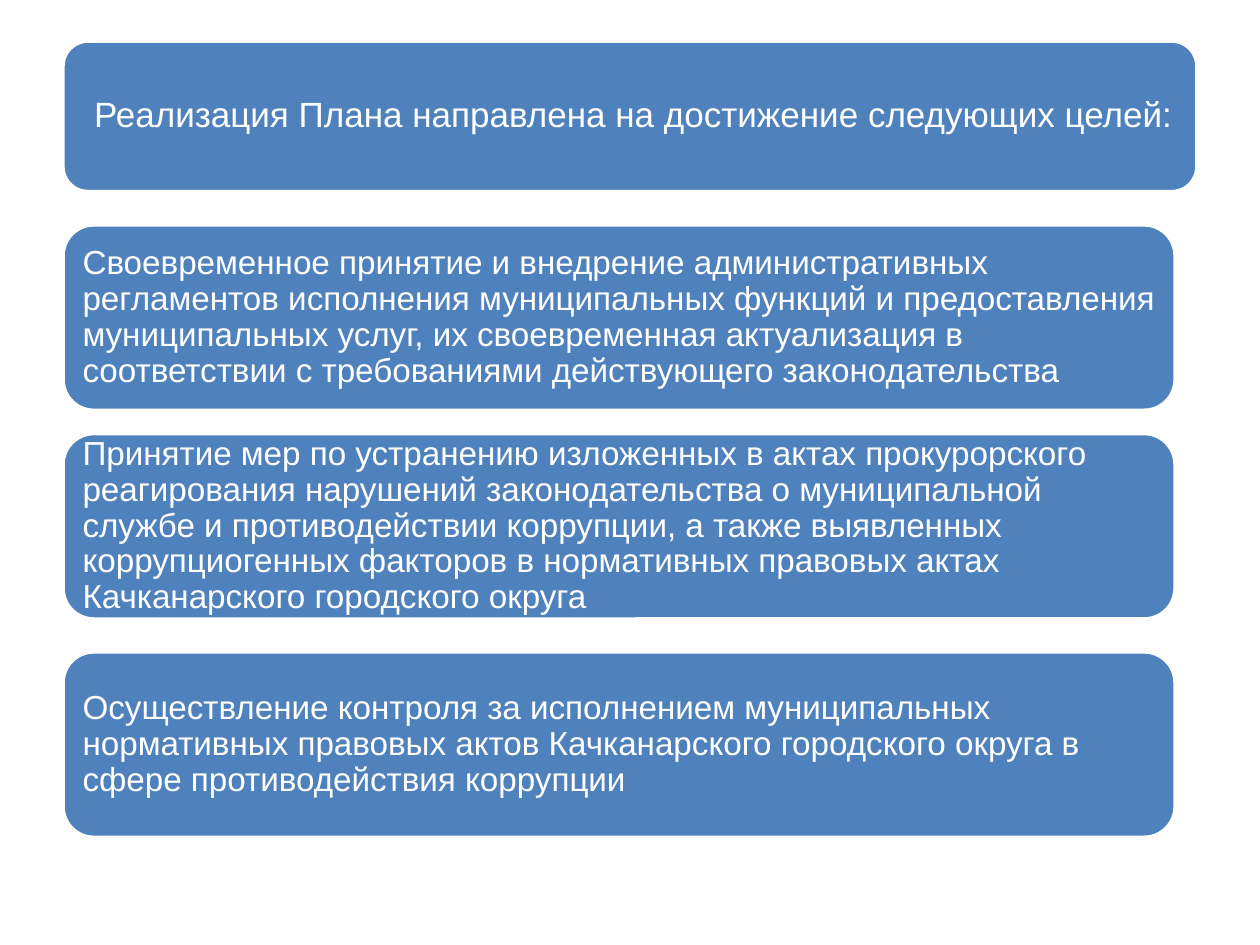
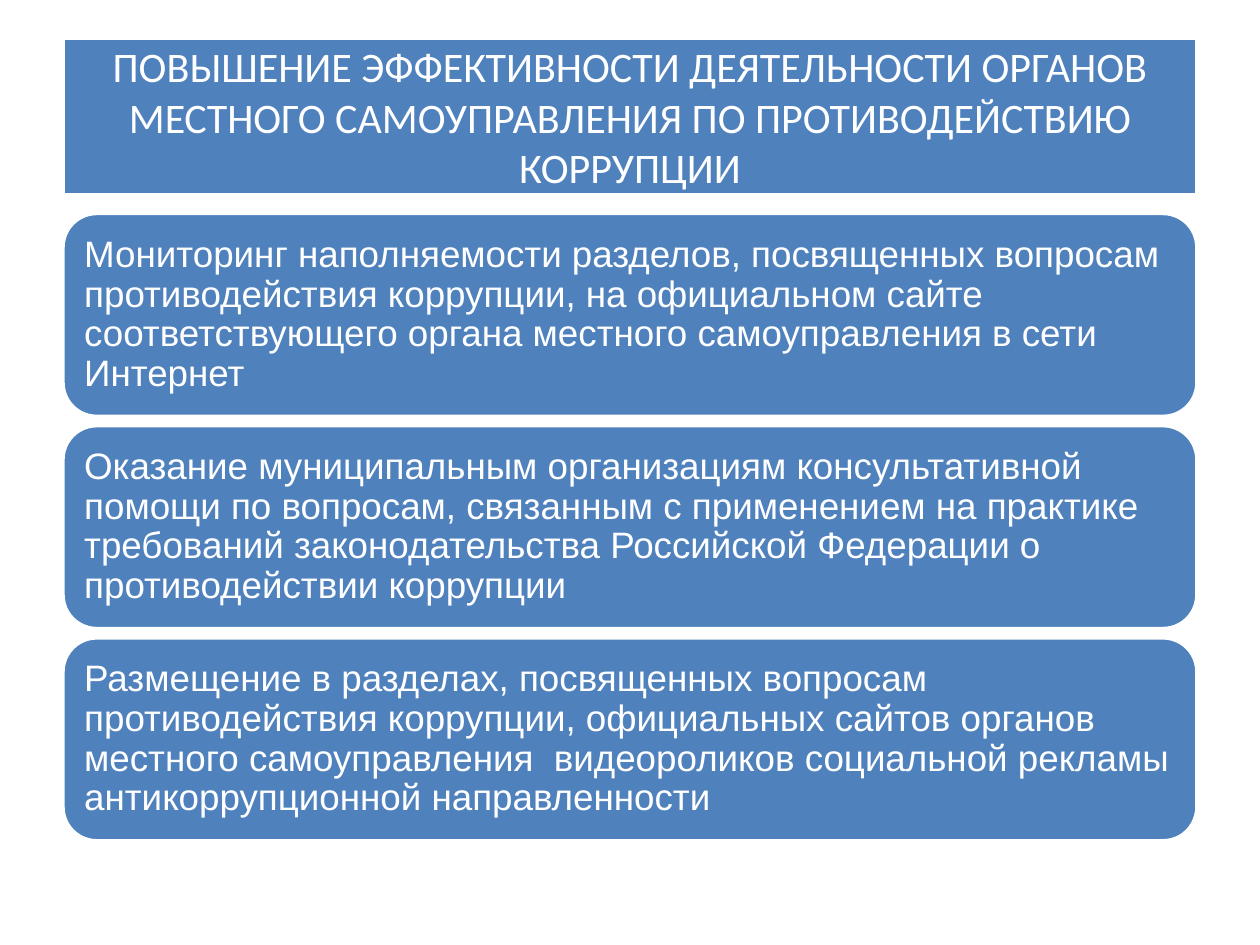
from pptx import Presentation
from pptx.dml.color import RGBColor
from pptx.enum.shapes import MSO_SHAPE
from pptx.enum.text import MSO_ANCHOR, MSO_AUTO_SIZE, PP_ALIGN
from pptx.util import Pt

# Content
GOALS = {
    "title": "Реализация Плана направлена на достижение следующих целей:",
    "cards": [
        "Своевременное принятие и внедрение административных регламентов исполнения "
        "муниципальных функций и предоставления муниципальных услуг, их своевременная "
        "актуализация в соответствии с требованиями действующего законодательства",
        "Принятие мер по устранению изложенных в актах прокурорского реагирования "
        "нарушений законодательства о муниципальной службе и противодействии коррупции, "
        "а также выявленных коррупциогенных факторов в нормативных правовых актах "
        "Качканарского городского округа",
        "Осуществление контроля за исполнением муниципальных нормативных правовых актов "
        "Качканарского городского округа в сфере противодействия коррупции",
    ],
}
STEPS = {
    "title": "ПОВЫШЕНИЕ ЭФФЕКТИВНОСТИ ДЕЯТЕЛЬНОСТИ ОРГАНОВ МЕСТНОГО "
             "САМОУПРАВЛЕНИЯ ПО ПРОТИВОДЕЙСТВИЮ КОРРУПЦИИ",
    "cards": [
        "Мониторинг наполняемости разделов, посвященных вопросам противодействия "
        "коррупции, на официальном сайте соответствующего органа местного "
        "самоуправления в сети Интернет",
        "Оказание муниципальным организациям консультативной помощи по вопросам, "
        "связанным с применением на практике требований законодательства Российской "
        "Федерации о противодействии коррупции",
        "Размещение в разделах, посвященных вопросам противодействия коррупции, "
        "официальных сайтов органов местного самоуправления  видеороликов социальной "
        "рекламы антикоррупционной направленности",
    ],
}

# Shared style
HUES = {"card": "4F81BD", "ink": "FFFFFF", "edge": "FFFFFF"}
LEFT, WIDE = 36, 648
TITLE_ONLY = 5


def hue(name):
    return RGBColor.from_string(HUES[name])


def paint(shape):
    shape.fill.solid()
    shape.fill.fore_color.rgb = hue("card")
    shape.line.color.rgb = hue("edge")
    shape.line.width = Pt(2)


def write(shape, text, size, font="Arial", align=PP_ALIGN.LEFT, lead=0.9, pad=(6, 6, 6, 6)):
    """Fill a shape with one paragraph; pad is left, top, right, bottom."""
    frame = shape.text_frame
    frame.word_wrap = True
    frame.auto_size = MSO_AUTO_SIZE.NONE
    frame.vertical_anchor = MSO_ANCHOR.MIDDLE
    frame.margin_left, frame.margin_top, frame.margin_right, frame.margin_bottom = map(Pt, pad)
    para = frame.paragraphs[0]
    para.alignment, para.line_spacing = align, lead
    run = para.add_run()
    run.text = text
    run.font.size, run.font.name = Pt(size), font
    run.font.color.rgb = hue("ink")


def add_card(slide, top, wide, high):
    card = slide.shapes.add_shape(
        MSO_SHAPE.ROUNDED_RECTANGLE, Pt(LEFT), Pt(top), Pt(wide), Pt(high))
    card.shadow.inherit = False
    paint(card)
    return card


def add_title(slide, text, top, high, size, **form):
    title = slide.shapes.title
    title.left, title.top, title.width, title.height = map(Pt, (LEFT, top, WIDE, high))
    write(title, text, size, align=PP_ALIGN.CENTER, **form)
    return title


def add_cards(slide, texts, tops, wide, high, size, **form):
    for text, top in zip(texts, tops):
        write(add_card(slide, top, wide, high), text, size, **form)


def main():
    deck = Presentation()
    deck.slide_width, deck.slide_height = Pt(720), Pt(540)
    layout = deck.slide_layouts[TITLE_ONLY]

    # Goals: title text lies over a rounded band
    slide = deck.slides.add_slide(layout)
    top, high = 23.5, 86
    add_card(slide, top, WIDE, high)
    title = add_title(slide, GOALS["title"], top, high, 20, pad=(14, 10, 10, 10))
    title.element.getparent().append(title.element)
    add_cards(slide, GOALS["cards"], (128.5, 247.75, 372.5), 635.5, 106, 19)

    # Steps: title is a plain filled band, cards are evenly spaced
    slide = deck.slides.add_slide(layout)
    title = add_title(slide, STEPS["title"], 21.6, 90, 24,
                      font="Calibri", lead=1.0, pad=(0, 0, 0, 0))
    paint(title)
    tops = [122 + 121.25 * row for row in range(len(STEPS["cards"]))]
    add_cards(slide, STEPS["cards"], tops, WIDE, 116, 21, pad=(6.5, 6.5, 6.5, 6.5))

    deck.save("out.pptx")


if __name__ == "__main__":
    main()
